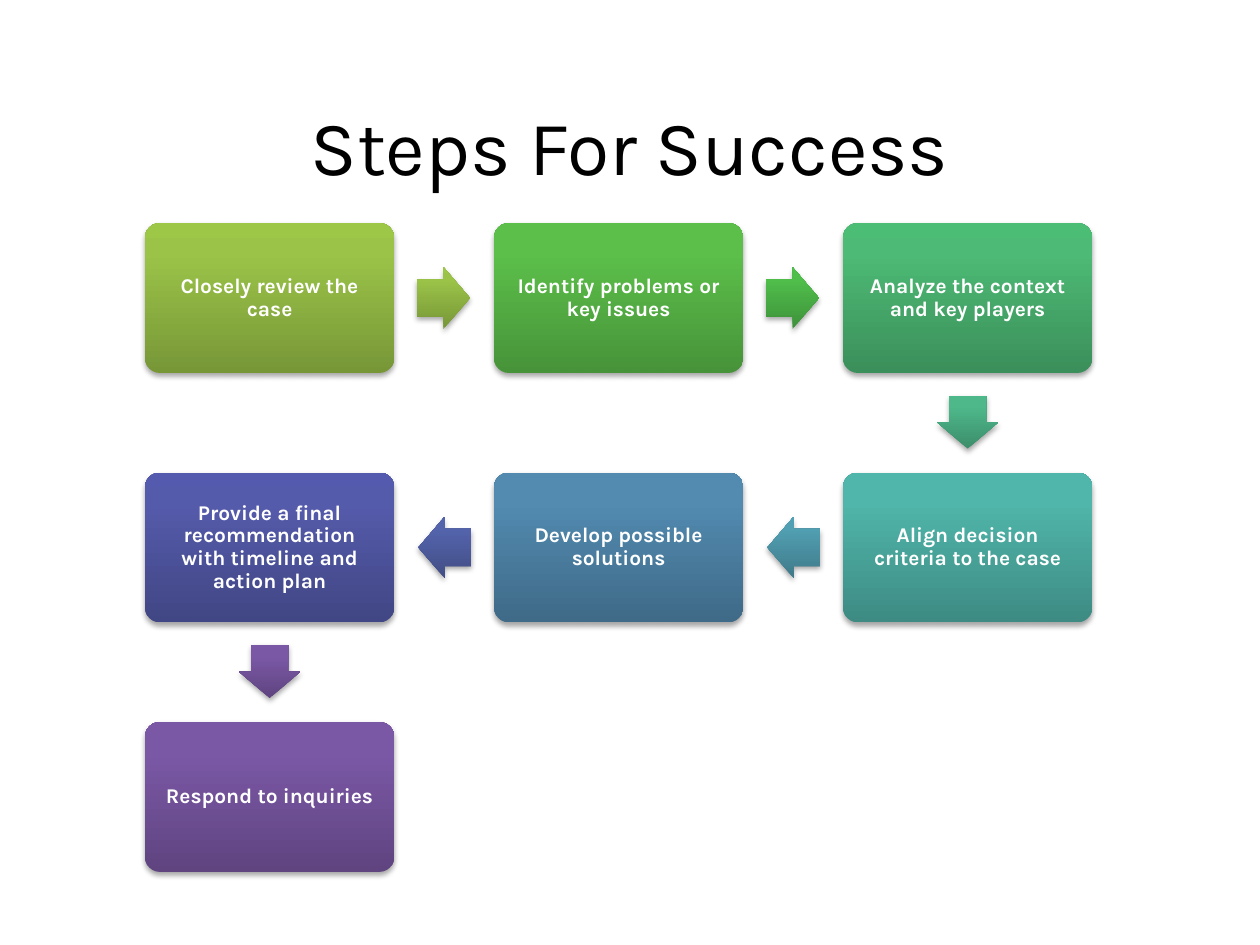
import copy

import pptx
import pptx.dml.color
import pptx.enum.shapes
import pptx.enum.text
import pptx.oxml
import pptx.oxml.ns
import pptx.util

Inches = pptx.util.Inches
Pt = pptx.util.Pt
RGBColor = pptx.dml.color.RGBColor
MSO_SHAPE = pptx.enum.shapes.MSO_SHAPE
qn = pptx.oxml.ns.qn

TITLE = "Steps For Success"
FONT = "Karla"
BLACK = RGBColor(0x00, 0x00, 0x00)
WHITE = RGBColor(0xFF, 0xFF, 0xFF)

# Gradient colours, from the bottom edge to the top edge
LIME = (RGBColor(0x77, 0x97, 0x37), RGBColor(0x9B, 0xC3, 0x48), RGBColor(0x9D, 0xC7, 0x46))
GREEN = (RGBColor(0x47, 0x93, 0x39), RGBColor(0x5C, 0xBF, 0x4A), RGBColor(0x5B, 0xC2, 0x49))
LEAF = (RGBColor(0x3E, 0x92, 0x3A), RGBColor(0x50, 0xBE, 0x4B), RGBColor(0x4F, 0xC1, 0x49))
EMERALD = (RGBColor(0x3B, 0x8F, 0x5A), RGBColor(0x4D, 0xBA, 0x75), RGBColor(0x4B, 0xBD, 0x75))
JADE = (RGBColor(0x3C, 0x8E, 0x6B), RGBColor(0x4E, 0xB8, 0x8B), RGBColor(0x4C, 0xBB, 0x8C))
TEAL = (RGBColor(0x3D, 0x8B, 0x83), RGBColor(0x50, 0xB5, 0xAA), RGBColor(0x4E, 0xB8, 0xAC))
CYAN = (RGBColor(0x3F, 0x7A, 0x89), RGBColor(0x51, 0x9F, 0xB2), RGBColor(0x50, 0xA0, 0xB5))
BLUE = (RGBColor(0x3F, 0x6A, 0x88), RGBColor(0x52, 0x8A, 0xB0), RGBColor(0x51, 0x8B, 0xB3))
INDIGO = (RGBColor(0x41, 0x4D, 0x85), RGBColor(0x54, 0x64, 0xAC), RGBColor(0x53, 0x63, 0xAF))
VIOLET = (RGBColor(0x41, 0x46, 0x84), RGBColor(0x55, 0x5B, 0xAB), RGBColor(0x54, 0x5A, 0xAE))
PURPLE = (RGBColor(0x5F, 0x44, 0x80), RGBColor(0x7B, 0x58, 0xA6), RGBColor(0x7C, 0x57, 0xA8))
STOP_POSITIONS = (0, 0.8, 1)

# Text, (column, row), box gradient, gradient of the arrow to the next step
STEPS = [
    ("Closely review the case", (0, 0), LIME, LIME),
    ("Identify problems or key issues", (1, 0), GREEN, LEAF),
    ("Analyze the context and key players", (2, 0), EMERALD, JADE),
    ("Align decision criteria to the case", (2, 1), TEAL, CYAN),
    ("Develop possible solutions", (1, 1), BLUE, INDIGO),
    ("Provide a final recommendation with timeline and action plan", (0, 1), VIOLET, PURPLE),
    ("Respond to inquiries", (0, 2), PURPLE, None),
]

ARROWS = {
    (1, 0): MSO_SHAPE.RIGHT_ARROW,
    (-1, 0): MSO_SHAPE.LEFT_ARROW,
    (0, 1): MSO_SHAPE.DOWN_ARROW,
}

GRID_LEFT, GRID_TOP = 1.15, 1.77
COLUMN_PITCH, ROW_PITCH = 2.77, 1.98
BOX_WIDTH, BOX_HEIGHT = 1.98, 1.19
ARROW_LENGTH, ARROW_BREADTH = 0.42, 0.49
ARROW_GAP = 0.18

SHADOW_XML = (
    '<a:outerShdw xmlns:a="http://schemas.openxmlformats.org/drawingml/2006/main" '
    'blurRad="40000" dist="23000" dir="5400000" rotWithShape="0">'
    '<a:srgbClr val="000000"><a:alpha val="35000"/></a:srgbClr></a:outerShdw>'
)


def add_glossy_shape(slide, kind, center, size, colors):
    """Add a borderless shape with a vertical gradient and a soft shadow."""
    (x, y), (width, height) = center, size
    shape = slide.shapes.add_shape(
        kind, Inches(x - width / 2), Inches(y - height / 2), Inches(width), Inches(height)
    )
    shape.fill.gradient()
    shape.fill.gradient_angle = 90
    properties = shape._element.spPr
    stop_list = properties.find(".//" + qn("a:gsLst"))
    stop_list.append(copy.deepcopy(stop_list[-1]))
    for stop, position, color in zip(shape.fill.gradient_stops, STOP_POSITIONS, colors):
        stop.position = position
        stop.color.rgb = color
    shape.line.fill.background()
    shape.shadow.inherit = False
    properties.find(qn("a:effectLst")).append(pptx.oxml.parse_xml(SHADOW_XML))
    return shape


def write_text(shape, text, size, color, bold=False):
    frame = shape.text_frame
    frame.word_wrap = True
    frame.vertical_anchor = pptx.enum.text.MSO_ANCHOR.MIDDLE
    paragraph = frame.paragraphs[0]
    paragraph.text = text
    paragraph.alignment = pptx.enum.text.PP_ALIGN.CENTER
    paragraph.font.name = FONT
    paragraph.font.size = Pt(size)
    paragraph.font.bold = bold
    paragraph.font.color.rgb = color


def add_step(slide, text, center, colors):
    box = add_glossy_shape(
        slide, MSO_SHAPE.ROUNDED_RECTANGLE, center, (BOX_WIDTH, BOX_HEIGHT), colors
    )
    box.adjustments[0] = 0.1
    write_text(box, text, 12, WHITE, bold=True)
    frame = box.text_frame
    frame.margin_left = frame.margin_right = Inches(0.09)
    frame.margin_top = frame.margin_bottom = Inches(0.09)
    frame.paragraphs[0].line_spacing = 0.9


def add_arrow(slide, center, direction, colors):
    """Add an arrow that leaves the box at center in the given direction."""
    (x, y), (dx, dy) = center, direction
    reach = ARROW_GAP + ARROW_LENGTH / 2
    arrow_center = (x + dx * (BOX_WIDTH / 2 + reach), y + dy * (BOX_HEIGHT / 2 + reach))
    size = (ARROW_LENGTH, ARROW_BREADTH) if dx else (ARROW_BREADTH, ARROW_LENGTH)
    arrow = add_glossy_shape(slide, ARROWS[direction], arrow_center, size, colors)
    arrow.adjustments[0] = 0.6
    arrow.adjustments[1] = 0.5


def main():
    presentation = pptx.Presentation()
    presentation.slide_width = Inches(10)
    presentation.slide_height = Inches(7.5)
    slide = presentation.slides.add_slide(presentation.slide_layouts[6])

    title = slide.shapes.add_textbox(Inches(0.5), Inches(0.52), Inches(9), Inches(1.25))
    write_text(title, TITLE, 44, BLACK)

    for index, (text, (column, row), box_colors, arrow_colors) in enumerate(STEPS):
        center = (
            GRID_LEFT + column * COLUMN_PITCH + BOX_WIDTH / 2,
            GRID_TOP + row * ROW_PITCH + BOX_HEIGHT / 2,
        )
        add_step(slide, text, center, box_colors)
        if arrow_colors:
            next_column, next_row = STEPS[index + 1][1]
            add_arrow(slide, center, (next_column - column, next_row - row), arrow_colors)

    presentation.save("out.pptx")


if __name__ == "__main__":
    main()
